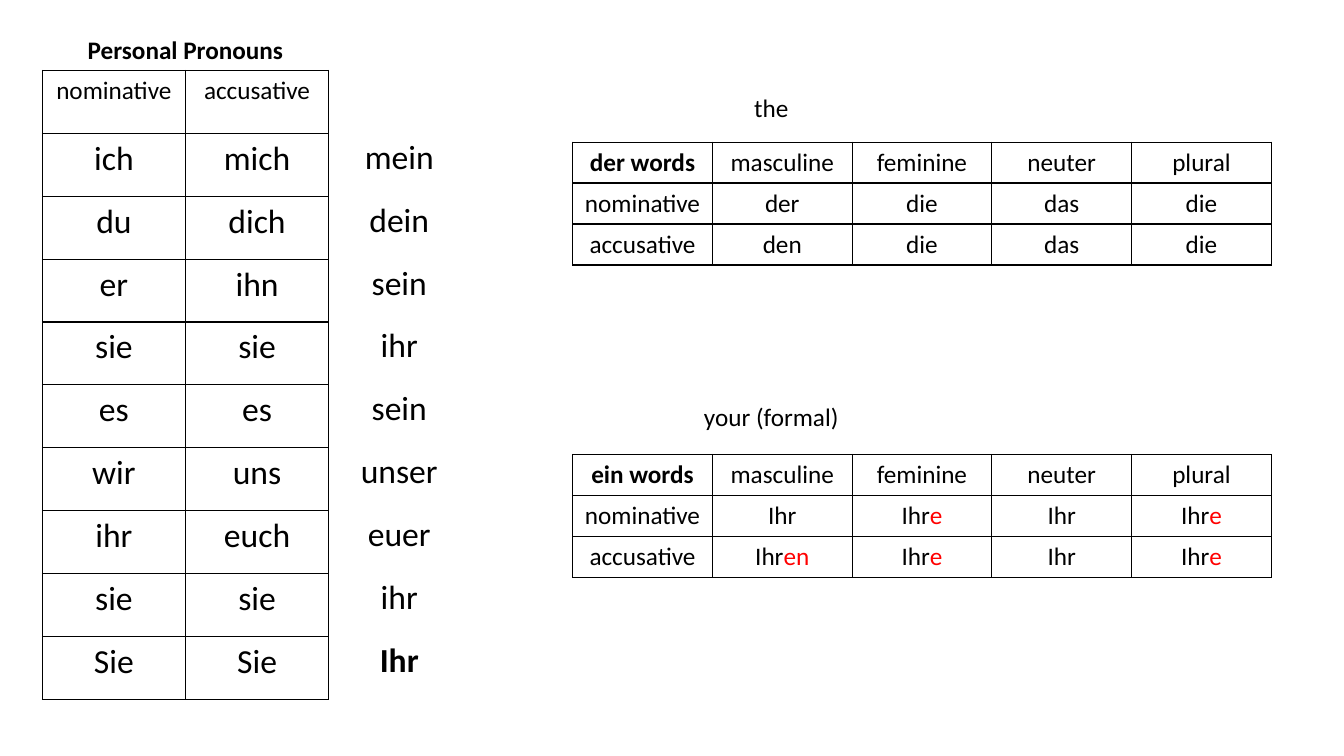
from dataclasses import dataclass

from lxml.etree import SubElement
from pptx import Presentation
from pptx.dml.color import RGBColor as RGB
from pptx.enum.text import MSO_AUTO_SIZE as Fit, PP_ALIGN as Align
from pptx.oxml.ns import qn
from pptx.util import Inches, Pt


@dataclass(frozen=True)
class Theme:
    font: str = "Calibri"
    ink: RGB = RGB(0, 0, 0)
    ending: RGB = RGB(255, 0, 0)
    small: int = 18
    large: int = 24
    rule: int = 1


THEME = Theme()

# Words: a bar splits off a red ending
PRONOUNS = [
    ("ich", "mich", "mein"), ("du", "dich", "dein"), ("er", "ihn", "sein"),
    ("sie", "sie", "ihr"), ("es", "es", "sein"), ("wir", "uns", "unser"),
    ("ihr", "euch", "euer"), ("sie", "sie", "ihr"), ("Sie", "Sie", "Ihr"),
]
CASES = ["nominative", "accusative"]
GENDERS = ["masculine", "feminine", "neuter", "plural"]
DER_WORDS = [["der", "die", "das", "die"], ["den", "die", "das", "die"]]
EIN_WORDS = [["Ihr", "Ihr|e", "Ihr", "Ihr|e"], ["Ihr|en", "Ihr|e", "Ihr", "Ihr|e"]]


def write(frame, words, size, bold=False):
    """Centre the words in a frame and colour any ending."""
    stem, _, ending = words.partition("|")
    line = frame.paragraphs[0]
    line.text = stem
    line.alignment = Align.CENTER
    if ending:
        line.add_run().text = ending
    for index, run in enumerate(line.runs):
        font = run.font
        font.name, font.size, font.bold = THEME.font, Pt(size), bold
        font.color.rgb = THEME.ending if index else THEME.ink


def outline(cell):
    """Rule all four sides of a cell."""
    props = cell._tc.get_or_add_tcPr()
    for index, side in enumerate("LRTB"):
        line = SubElement(props, qn(f"a:ln{side}"), w=str(Pt(THEME.rule)))
        fill = SubElement(line, qn("a:solidFill"))
        SubElement(fill, qn("a:srgbClr"), val=str(THEME.ink))
        props.insert(index, line)


def add_grid(slide, box, rows, size, head=None, bold=(), ruled=True):
    """Fill the box with equal cells; bold lists (row, column) pairs."""
    shape = slide.shapes.add_table(len(rows), len(rows[0]), *map(Inches, box))
    table = shape.table
    table.first_row = table.horz_banding = False
    for column in table.columns:
        column.width = Inches(box[2] / len(rows[0]))
    for row in table.rows:
        row.height = Inches(box[3] / len(rows))
    for r, row in enumerate(rows):
        for c, words in enumerate(row):
            cell = table.cell(r, c)
            cell.fill.background()
            if ruled:
                outline(cell)
            pt = head if head and r == 0 else size
            write(cell.text_frame, words, pt, (r, c) in bold)


def add_title(slide, left, top, words, bold=False):
    box = slide.shapes.add_textbox(*map(Inches, (left, top, 2.76, 0.4)))
    box.text_frame.word_wrap = True
    box.text_frame.auto_size = Fit.SHAPE_TO_FIT_TEXT
    write(box.text_frame, words, THEME.small, bold)


def pronoun_chart(slide, left, top, step):
    """Pronoun table, with the possessives beside it."""
    add_title(slide, left + 0.04, top - 0.41, "Personal Pronouns", True)
    pairs = [CASES] + [row[:2] for row in PRONOUNS]
    add_grid(slide, (left, top, 2.84, step * len(pairs)), pairs,
             THEME.large, head=THEME.small)
    owners = [row[2:] for row in PRONOUNS]
    last = len(owners) - 1
    add_grid(slide, (left + 2.91, top + step - 0.01, 1.26, step * len(owners)),
             owners, THEME.large, bold=[(last, 0)], ruled=False)


def article_chart(slide, left, top, title, title_top, name, forms):
    """Article forms by case and gender, under a meaning."""
    add_title(slide, left + 0.59, title_top, title)
    rows = [[name] + GENDERS] + [[case] + row for case, row in zip(CASES, forms)]
    add_grid(slide, (left, top, 6.93, 1.22), rows, THEME.small, bold=[(0, 0)])


def main():
    deck = Presentation()
    deck.slide_width, deck.slide_height = Inches(13.33), Inches(7.5)
    slide = deck.slides.add_slide(deck.slide_layouts[6])
    pronoun_chart(slide, 0.42, 0.7, 0.624)
    article_chart(slide, 5.68, 1.41, "the", 0.87, "der words", DER_WORDS)
    article_chart(slide, 5.68, 4.51, "your (formal)", 3.93, "ein words", EIN_WORDS)
    deck.save("out.pptx")


if __name__ == "__main__":
    main()
